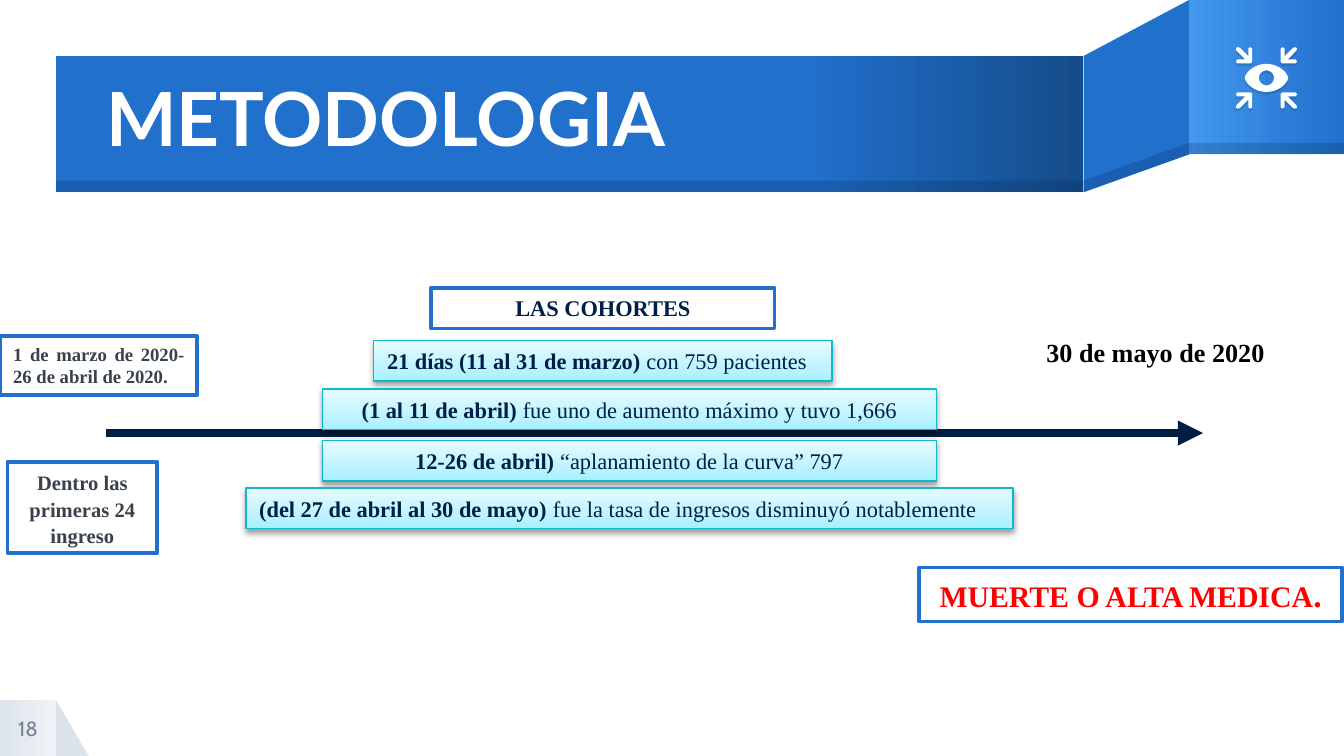
from math import cos, pi, sin

from lxml import etree
from pptx import Presentation
from pptx.dml.color import RGBColor
from pptx.enum import dml, shapes, text
from pptx.oxml.ns import qn
from pptx.util import Pt

BLUE = RGBColor(0x21, 0x70, 0xCC)
LIGHT_BLUE = RGBColor(0x43, 0x97, 0xEE)
DEEP_BLUE = RGBColor(0x15, 0x4C, 0x8A)
NAVY = RGBColor(0x00, 0x1F, 0x46)
ARROW_NAVY = RGBColor(0x00, 0x1E, 0x44)
WHITE = RGBColor(0xFF, 0xFF, 0xFF)
BLACK = RGBColor(0x00, 0x00, 0x00)
RED = RGBColor(0xFF, 0x00, 0x00)
SLATE = RGBColor(0x39, 0x41, 0x4B)
GREY = RGBColor(0x74, 0x83, 0x94)
PALE_GREY = RGBColor(0xDD, 0xE3, 0xEB)
PALER_GREY = RGBColor(0xF0, 0xF3, 0xF7)
TEAL = RGBColor(0x0F, 0xB9, 0xCA)
CYAN_STOPS = [(0, RGBColor(0xA4, 0xF0, 0xFF)), (35, RGBColor(0xBF, 0xF4, 0xFF)),
              (100, RGBColor(0xE7, 0xFB, 0xFF))]

LEFT, CENTER, JUSTIFY = (text.PP_ALIGN.LEFT, text.PP_ALIGN.CENTER, text.PP_ALIGN.JUSTIFY)
SERIF = "Times New Roman"

TITLE = "METODOLOGIA"
PAGE = "18"
END_DATE = "30 de mayo de 2020"

FRAMED = [
    ((0, 180, 105.75, 31.5), [("1 de marzo de 2020-26 de abril de 2020.", 10)],
     dict(color=SLATE, align=JUSTIFY)),
    ((492.5, 304, 226.5, 29), [("MUERTE O ALTA MEDICA", 16), (".", 18)],
     dict(color=RED, align=CENTER, wrap=False)),
    ((4, 247.5, 80.25, 48.75), [("Dentro las primeras 24 ingreso", 11)],
     dict(color=SLATE, align=CENTER, spacing=1.07)),
    ((231, 154.25, 184, 21.75), [("LAS COHORTES", 12)],
     dict(color=NAVY, align=CENTER)),
]

COHORTS = [
    ((200.25, 182.5, 245.5), "21 días (11 al 31 de marzo) ", "con 759 pacientes", LEFT),
    ((172.75, 208.5, 329), "(1 al 11 de abril) ",
     "fue uno de aumento máximo y tuvo 1,666", CENTER),
    ((172.75, 236, 329), "12-26 de abril) ", "“aplanamiento de la curva” 797", CENTER),
    ((131.75, 261.5, 411), "(del 27 de abril al 30 de mayo) ",
     "fue la tasa de ingresos disminuyó notablemente", LEFT),
]
COHORT_H = 21.75

BAND_L, BAND_R, BAND_T, BAND_B = 30, 580.5, 30, 103
PANEL_L, PANEL_R, PANEL_B = 637, 720, 82.75
EDGE = 6.25

ICON_X, ICON_Y = 678.5, 41.75
ICON_ARROW = [(8.4, -7.8), (15.6, -7.8), (16.4, -8.8), (15.6, -9.9), (11.4, -9.9),
              (16.2, -14.8), (16.3, -16), (15.3, -16.5), (14.3, -16.2), (9.7, -11.6),
              (9.7, -15.7), (8.7, -16.5), (7.6, -15.7), (7.6, -8.6)]


def add_alpha(color_el, percent):
    etree.SubElement(color_el, qn("a:alpha"), val=str(percent * 1000))


def paint(sp, fill, angle=0, alpha=None, line=None, width=2):
    if isinstance(fill, list):
        sp.fill.gradient()
        sp.fill.gradient_angle = angle
        stops = sp.element.spPr.find(qn("a:gradFill")).find(qn("a:gsLst"))
        for old in list(stops):
            stops.remove(old)
        for pos, color in fill:
            stop = etree.SubElement(stops, qn("a:gs"), pos=str(pos * 1000))
            etree.SubElement(stop, qn("a:srgbClr"), val=str(color))
    else:
        sp.fill.solid()
        sp.fill.fore_color.rgb = fill
        if alpha:
            add_alpha(sp.element.spPr.find(qn("a:solidFill"))[0], alpha)
    if line is None:
        sp.line.fill.background()
    else:
        sp.line.color.rgb = line
        sp.line.width = Pt(width)
    sp.shadow.inherit = False


def cast_shadow(sp, color, alpha, blur, dist):
    effects = sp.element.spPr.find(qn("a:effectLst"))
    outer = etree.SubElement(effects, qn("a:outerShdw"), blurRad=str(Pt(blur)),
                             dist=str(Pt(dist)), dir="5400000", rotWithShape="0")
    add_alpha(etree.SubElement(outer, qn("a:srgbClr"), val=str(color)), alpha)


def write(tf, runs, color=NAVY, font=SERIF, align=LEFT, spacing=None, wrap=True,
          anchor=text.MSO_ANCHOR.TOP, inset=True):
    tf.word_wrap = wrap
    tf.vertical_anchor = anchor
    if not inset:
        tf.margin_left = tf.margin_right = tf.margin_top = tf.margin_bottom = 0
    p = tf.paragraphs[0]
    p.alignment = align
    if spacing:
        p.line_spacing = spacing
    for words, size, *bold in runs:
        r = p.add_run()
        r.text = words
        r.font.size = Pt(size)
        r.font.name = font
        r.font.bold = bold[0] if bold else True
        r.font.color.rgb = color


def add_block(s, box, fill, kind=shapes.MSO_SHAPE.RECTANGLE, **look):
    sp = s.shapes.add_shape(kind, *map(Pt, box))
    paint(sp, fill, **look)
    return sp


def add_outline(s, contours, fill, **look):
    builder = None
    for contour in contours:
        (x, y), *rest = [(Pt(a), Pt(b)) for a, b in contour]
        if builder is None:
            builder = s.shapes.build_freeform(x, y)
        else:
            builder.move_to(x, y)
        builder.add_line_segments(rest, close=True)
    sp = builder.convert_to_shape()
    paint(sp, fill, **look)
    return sp


def add_banner(s):
    add_block(s, (30, 375, 17.5, 30), PALE_GREY, shapes.MSO_SHAPE.RIGHT_TRIANGLE)
    add_block(s, (0, 375, 30, 30), [(0, PALE_GREY), (100, PALER_GREY)])
    band_w, panel_w = BAND_R - BAND_L, PANEL_R - PANEL_L
    add_outline(s, [[(PANEL_L, 0), (BAND_R, BAND_T), (BAND_R, BAND_B),
                     (PANEL_L, PANEL_B)]], BLUE)
    add_block(s, (PANEL_L, 0, panel_w, PANEL_B), [(0, LIGHT_BLUE), (100, BLUE)])
    add_block(s, (BAND_L, BAND_T, band_w, BAND_B - BAND_T),
              [(0, BLUE), (73, BLUE), (100, DEEP_BLUE)])
    add_outline(s, [[(PANEL_L, PANEL_B - EDGE), (BAND_R, BAND_B - EDGE),
                     (BAND_R, BAND_B), (PANEL_L, PANEL_B)]], NAVY, alpha=20)
    for left, bottom, width in ((PANEL_L, PANEL_B, panel_w), (BAND_L, BAND_B, band_w)):
        add_block(s, (left, bottom - EDGE, width, EDGE), NAVY, alpha=20)


def add_eye_icon(s):
    turns = [2 * pi * i / 48 for i in range(48)]
    lens = [(ICON_X + 11.6 * cos(t), ICON_Y + 7.5 * sin(t) * abs(sin(t)) ** 0.3)
            for t in turns]
    pupil = [(ICON_X + 4 * cos(t), ICON_Y - 4 * sin(t)) for t in turns]
    parts = [[lens, pupil]]
    for fx in (1, -1):
        for fy in (1, -1):
            parts.append([[(ICON_X + fx * x, ICON_Y + fy * y) for x, y in ICON_ARROW]])
    for contours in parts:
        cast_shadow(add_outline(s, contours, WHITE), NAVY, 15, 0, 1.5)


def add_timeline(s):
    y = Pt(232)
    line = s.shapes.add_connector(shapes.MSO_CONNECTOR.STRAIGHT, Pt(57), y, Pt(644.5), y)
    line.line.color.rgb = ARROW_NAVY
    line.line.width = Pt(4.5)
    line.line.dash_style = dml.MSO_LINE.SOLID
    etree.SubElement(line.line._get_or_add_ln(), qn("a:tailEnd"), type="triangle")
    etree.SubElement(line.element.spPr, qn("a:effectLst"))


def main():
    prs = Presentation()
    prs.slide_width, prs.slide_height = Pt(720), Pt(405)
    s = prs.slides.add_slide(prs.slide_layouts[5])
    add_banner(s)
    add_eye_icon(s)

    title = s.shapes.title
    title.left, title.top, title.width, title.height = map(Pt, (57, 29, 532, 73))
    write(title.text_frame, [(TITLE, 40)], color=WHITE, font="Lato", spacing=0.9,
          anchor=text.MSO_ANCHOR.MIDDLE, inset=False)
    title.element.getparent().append(title.element)

    number = s.shapes.add_textbox(*map(Pt, (0, 375, 30, 30)))
    write(number.text_frame, [(PAGE, 11, False)], color=GREY, font="Cabin", align=CENTER,
          anchor=text.MSO_ANCHOR.MIDDLE, inset=False)
    add_timeline(s)

    for box, runs, look in FRAMED:
        write(add_block(s, box, WHITE, line=BLUE).text_frame, runs, **look)
    date = s.shapes.add_textbox(*map(Pt, (553.5, 176.5, 132.5, 24.25)))
    write(date.text_frame, [(END_DATE, 14)], color=BLACK, wrap=False)
    for box, period, finding, align in COHORTS:
        sp = add_block(s, (*box, COHORT_H), CYAN_STOPS, angle=90, line=TEAL, width=0.75)
        cast_shadow(sp, BLACK, 38, 3.1, 1.6)
        write(sp.text_frame, [(period, 12), (finding, 12, False)], align=align)

    prs.save("out.pptx")


if __name__ == "__main__":
    main()
